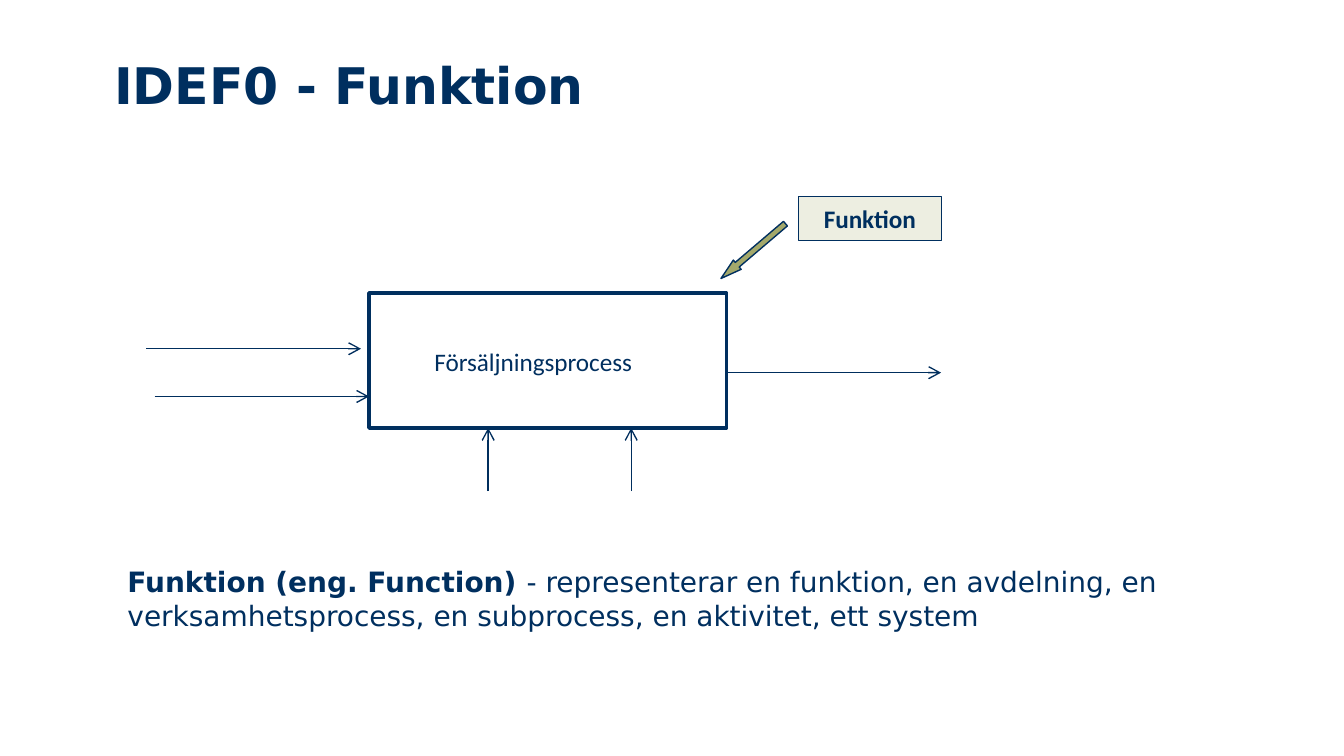
from dataclasses import dataclass

from lxml.etree import SubElement
from pptx import Presentation
from pptx.dml.color import RGBColor
from pptx.enum.shapes import MSO_CONNECTOR, MSO_SHAPE
from pptx.enum.text import MSO_ANCHOR, PP_ALIGN
from pptx.oxml.ns import qn
from pptx.util import Inches, Pt


@dataclass(frozen=True)
class Theme:
    ink: str = "002F5F"
    flow: str = "002E5D"
    paper: str = "FFFFFF"
    tag: str = "EDEEE1"
    pointer: str = "A3A86B"
    sans: str = "DejaVu Sans"
    label_font: str = "Calibri"
    title: float = 27
    body: float = 15
    label: float = 13.5


THEME = Theme()
WIDTH = 10
HEIGHT = WIDTH * 9 / 16
CELL = WIDTH / 100  # square grid cell: 100 columns across the slide


def cells(*values):
    return [Inches(v * CELL) for v in values]


def write(sp, runs, size, font=THEME.sans, align=PP_ALIGN.LEFT,
          anchor=MSO_ANCHOR.TOP):
    """Fill a shape with one paragraph of (text, bold) runs."""
    tf = sp.text_frame
    tf.word_wrap = True
    tf.vertical_anchor = anchor
    p = tf.paragraphs[0]
    p.alignment = align
    for text, bold in runs:
        r = p.add_run()
        r.text = text
        r.font.name, r.font.size, r.font.bold = font, Pt(size), bold
        r.font.color.rgb = RGBColor.from_string(THEME.ink)


def add_text(slide, box, runs, size, **fmt):
    write(slide.shapes.add_textbox(*cells(*box)), runs, size, **fmt)


def add_block(slide, kind, box, fill, line_width):
    sp = slide.shapes.add_shape(kind, *cells(*box))
    sp.shadow.inherit = False
    sp.fill.solid()
    sp.fill.fore_color.rgb = RGBColor.from_string(fill)
    sp.line.color.rgb = RGBColor.from_string(THEME.ink)
    sp.line.width = Pt(line_width)
    return sp


def add_arrow(slide, x1, y1, x2, y2):
    line = slide.shapes.add_connector(
        MSO_CONNECTOR.STRAIGHT, *cells(x1, y1, x2, y2))
    line.line.color.rgb = RGBColor.from_string(THEME.flow)
    line.line.width = Pt(0.75)
    SubElement(line.line._get_or_add_ln(), qn("a:tailEnd"), type="arrow")
    SubElement(line._element.spPr, qn("a:effectLst"))


def add_process(slide, box):
    """Process box with its inputs, output and mechanisms."""
    x, y, w, h = box
    right, bottom = x + w, y + h
    reach, rise = 0.6 * w, 4.7
    add_block(slide, MSO_SHAPE.RECTANGLE, box, THEME.paper, 2)

    # Inputs: the upper one stops just short of the box
    for gap, drop in ((0.6, 4.15), (0, 7.7)):
        end = x - gap
        add_arrow(slide, end - reach, y + drop, end, y + drop)
    # Output
    add_arrow(slide, right, y + 5.93, right + reach, y + 5.93)
    # Mechanisms: one third of the width in, and 40 % further on
    for share in (1 / 3, 1 / 3 + 0.4):
        mid = x + share * w
        add_arrow(slide, mid, bottom + rise, mid, bottom)

    add_text(slide, (x + 3.88, y + 3.5, 19.8, 3.3),
             [("Försäljningsprocess", False)], THEME.label,
             font=THEME.label_font)


def add_callout(slide, box):
    """Tag with a slanted block arrow at its lower left."""
    x, y, w, h = box
    tag = add_block(slide, MSO_SHAPE.RECTANGLE, box, THEME.tag, 0.25)
    write(tag, [("Funktion", True)], THEME.label, font=THEME.label_font,
          align=PP_ALIGN.CENTER, anchor=MSO_ANCHOR.MIDDLE)
    arrow = add_block(slide, MSO_SHAPE.LEFT_ARROW,
                      (x - 6.5, y + 3.63, 6.3, 0.9), THEME.pointer, 0.75)
    arrow.adjustments[0], arrow.adjustments[1] = 0.5, 1.76
    arrow.rotation = 319.6


def main():
    prs = Presentation()
    prs.slide_width, prs.slide_height = Inches(WIDTH), Inches(HEIGHT)
    slide = prs.slides.add_slide(prs.slide_layouts[6])

    # Title
    add_text(slide, (7.5, 3.54, 67.5, 9.4),
             [("IDEF0 - Funktion", True)], THEME.title)
    # Diagram
    add_process(slide, (27.46, 21.8, 26.6, 10.05))
    add_callout(slide, (59.4, 14.6, 10.64, 3.3))
    # Definition
    add_text(slide, (8.5, 41.54, 82.5, 6.1), [
        ("Funktion (eng. Function) ", True),
        ("- representerar en funktion, en avdelning, en verksamhetsprocess, "
         "en subprocess, en aktivitet, ett system", False),
    ], THEME.body)

    prs.save("out.pptx")


if __name__ == "__main__":
    main()
